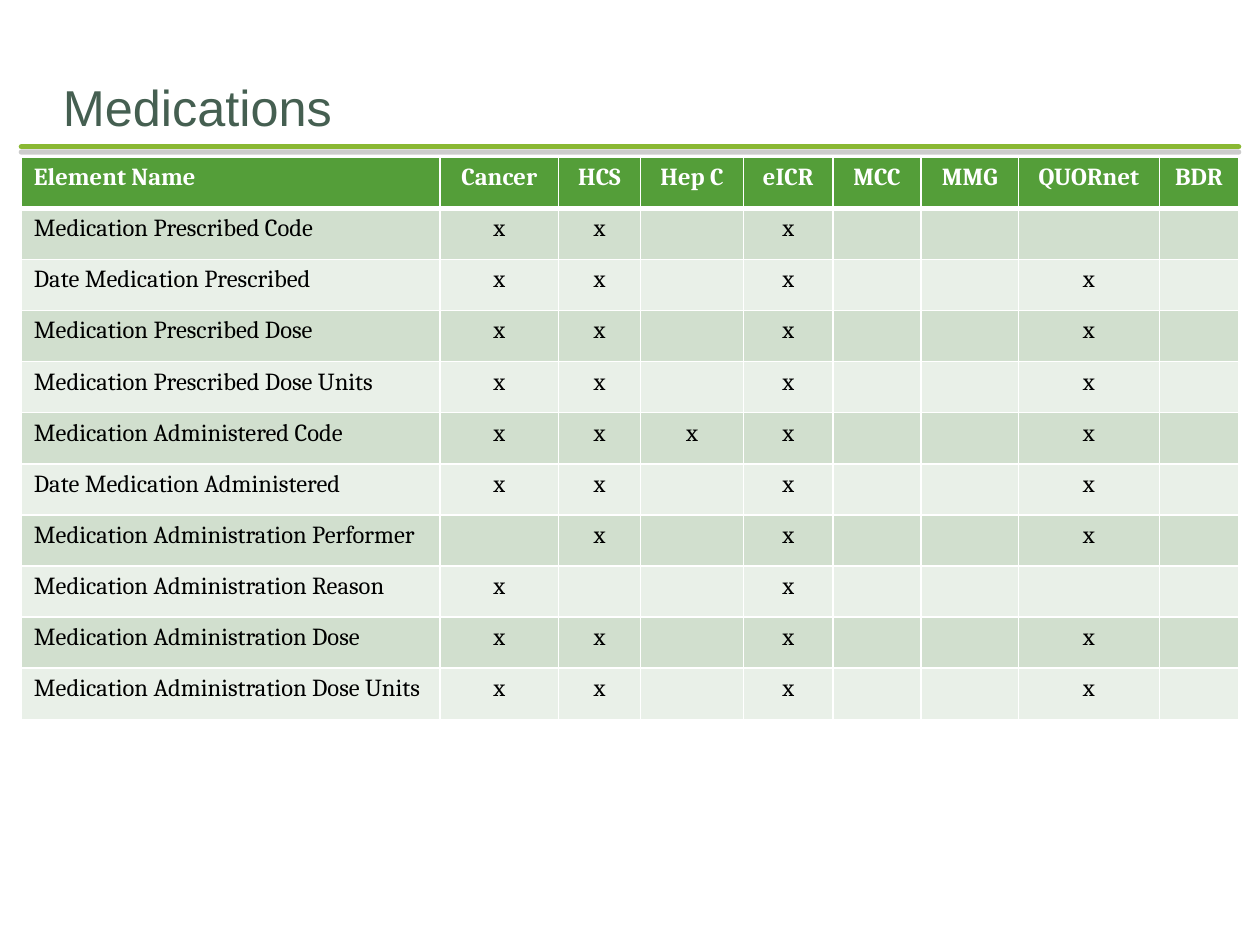
from dataclasses import dataclass

from pptx import Presentation
from pptx.dml.color import RGBColor
from pptx.enum.shapes import MSO_CONNECTOR
from pptx.enum.text import MSO_ANCHOR, PP_ALIGN
from pptx.oxml import parse_xml
from pptx.oxml.ns import nsdecls, qn
from pptx.slide import Slide
from pptx.table import _Cell
from pptx.text.text import TextFrame
from pptx.util import Cm, Pt

STRAIGHT = MSO_CONNECTOR.STRAIGHT
BOTTOM = MSO_ANCHOR.BOTTOM
LEFT, CENTER = PP_ALIGN.LEFT, PP_ALIGN.CENTER


@dataclass(frozen=True)
class Theme:
    title_font: str = "Arial"
    table_font: str = "Cambria"
    title_size: float = 28.8
    table_size: float = 14
    title_color: str = "455F51"
    rule_color: str = "8AB833"
    shadow_color: str = "808080"
    header_fill: str = "549E39"
    band_fills: tuple[str, str] = ("D1DFCE", "E9F0E8")
    white: str = "FFFFFF"
    black: str = "000000"
    thin: float = 1
    thick: float = 3


@dataclass(frozen=True)
class Column:
    name: str
    width: float


@dataclass(frozen=True)
class Element:
    name: str
    used_by: str


THEME = Theme()
ROW_HEIGHT = 1.03
MARK = "x"

COLUMNS = [
    Column("Element Name", 8.44),
    Column("Cancer", 2.39),
    Column("HCS", 1.65),
    Column("Hep C", 2.08),
    Column("eICR", 1.8),
    Column("MCC", 1.78),
    Column("MMG", 1.96),
    Column("QUORnet", 2.84),
    Column("BDR", 1.6),
]

ELEMENTS = [
    Element("Medication Prescribed Code", "Cancer, HCS, eICR"),
    Element("Date Medication Prescribed", "Cancer, HCS, eICR, QUORnet"),
    Element("Medication Prescribed Dose", "Cancer, HCS, eICR, QUORnet"),
    Element("Medication Prescribed Dose Units", "Cancer, HCS, eICR, QUORnet"),
    Element("Medication Administered Code", "Cancer, HCS, Hep C, eICR, QUORnet"),
    Element("Date Medication Administered", "Cancer, HCS, eICR, QUORnet"),
    Element("Medication Administration Performer", "HCS, eICR, QUORnet"),
    Element("Medication Administration Reason", "Cancer, eICR"),
    Element("Medication Administration Dose", "Cancer, HCS, eICR, QUORnet"),
    Element("Medication Administration Dose Units", "Cancer, HCS, eICR, QUORnet"),
]


def write_text(frame: TextFrame, text: str, *, font: str, size: float, color: str,
               bold: bool = False, align: PP_ALIGN = LEFT) -> None:
    paragraph = frame.paragraphs[0]
    paragraph.alignment = align
    run = paragraph.add_run()
    run.text = text
    run.font.name = font
    run.font.size = Pt(size)
    run.font.bold = bold
    run.font.color.rgb = RGBColor.from_string(color)


def add_title(slide: Slide, text: str) -> None:
    box = slide.shapes.add_textbox(Cm(1.27), Cm(1.29), Cm(22.86), Cm(1.47))
    frame = box.text_frame
    frame.word_wrap = True
    frame.vertical_anchor = BOTTOM
    frame.margin_left = frame.margin_right = frame.margin_bottom = 0
    write_text(frame, text, font=THEME.title_font, size=THEME.title_size,
               color=THEME.title_color)


def add_rule(slide: Slide) -> None:
    rule = slide.shapes.add_connector(STRAIGHT, Cm(0.43), Cm(2.96), Cm(24.97), Cm(2.96))
    rule.line.color.rgb = RGBColor.from_string(THEME.rule_color)
    rule.line.width = Pt(THEME.thick)
    properties = rule.element.spPr
    properties.find(qn("a:ln")).set("cap", "rnd")
    properties.append(parse_xml(
        f'<a:effectLst {nsdecls("a")}>'
        f'<a:outerShdw blurRad="0" dist="{Pt(3)}" dir="5400000">'
        f'<a:srgbClr val="{THEME.shadow_color}"><a:alpha val="40000"/></a:srgbClr>'
        '</a:outerShdw></a:effectLst>'))


def style_cell(cell: _Cell, fill: str, top: float, bottom: float) -> None:
    cell.margin_bottom = 0
    cell.fill.solid()
    cell.fill.fore_color.rgb = RGBColor.from_string(fill)
    properties = cell._tc.get_or_add_tcPr()
    borders = {"lnL": THEME.thin, "lnR": THEME.thin, "lnT": top, "lnB": bottom}
    for position, (side, width) in enumerate(borders.items()):
        properties.insert(position, parse_xml(
            f'<a:{side} {nsdecls("a")} w="{Pt(width)}"><a:solidFill>'
            f'<a:srgbClr val="{THEME.white}"/></a:solidFill></a:{side}>'))


def table_rows() -> list[list[str]]:
    header = [column.name for column in COLUMNS]
    rows = [header]
    for element in ELEMENTS:
        used_by = element.used_by.split(", ")
        rows.append([element.name] + [MARK if name in used_by else "" for name in header[1:]])
    return rows


def add_element_table(slide: Slide) -> None:
    rows = table_rows()
    width = sum(column.width for column in COLUMNS)
    table = slide.shapes.add_table(len(rows), len(COLUMNS), Cm(0.43), Cm(3.17),
                                   Cm(width), Cm(ROW_HEIGHT * len(rows))).table
    table.horz_banding = False
    for index, column in enumerate(COLUMNS):
        table.columns[index].width = Cm(column.width)
    for row_index, values in enumerate(rows):
        table.rows[row_index].height = Cm(ROW_HEIGHT)
        is_header = row_index == 0
        fill = THEME.header_fill if is_header else THEME.band_fills[(row_index - 1) % 2]
        top = THEME.thick if row_index == 1 else THEME.thin
        bottom = THEME.thick if is_header else THEME.thin
        for column_index, value in enumerate(values):
            cell = table.cell(row_index, column_index)
            style_cell(cell, fill, top, bottom)
            if value:
                write_text(cell.text_frame, value, font=THEME.table_font,
                           size=THEME.table_size, bold=is_header,
                           color=THEME.white if is_header else THEME.black,
                           align=CENTER if column_index else LEFT)


def main() -> None:
    """Build the slide showing which programs use each medication element."""
    presentation = Presentation()
    presentation.slide_width, presentation.slide_height = Cm(25.4), Cm(19.05)
    slide = presentation.slides.add_slide(presentation.slide_layouts[6])
    add_rule(slide)
    add_title(slide, "Medications")
    add_element_table(slide)
    presentation.save("out.pptx")


if __name__ == "__main__":
    main()
